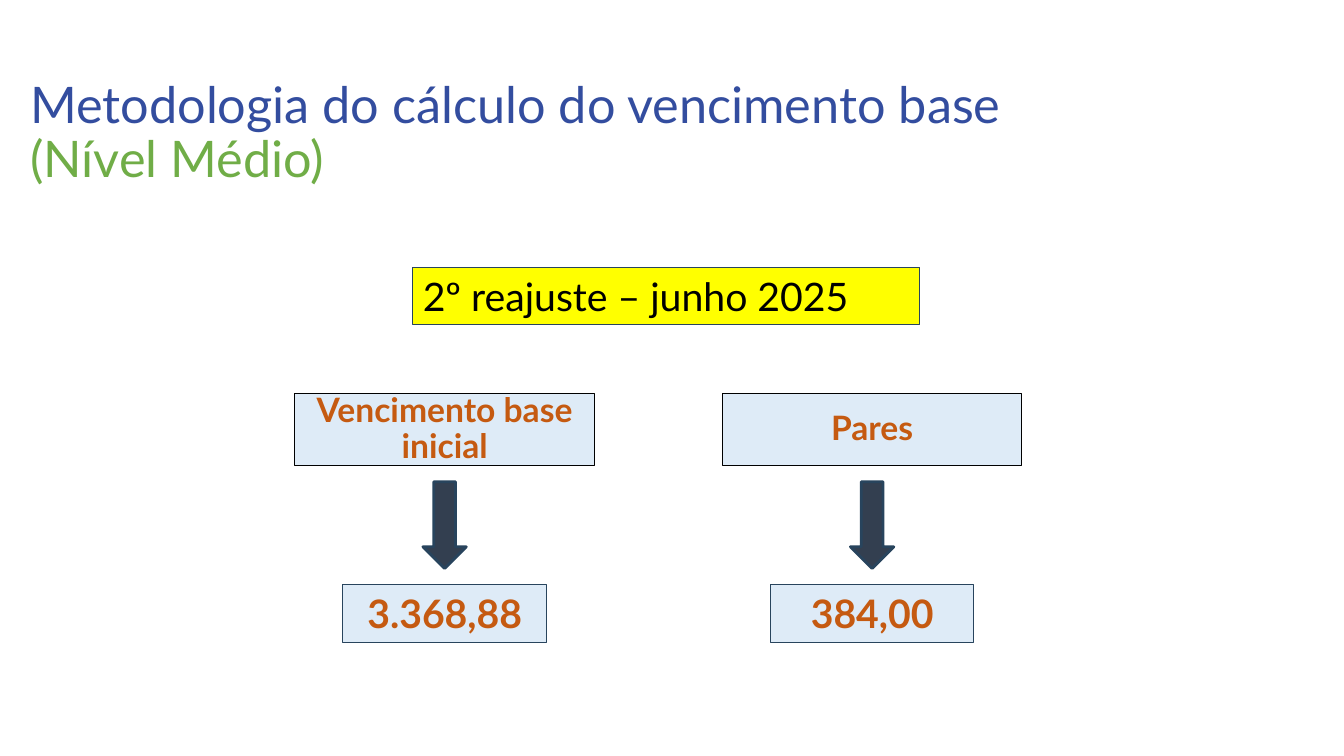
from pptx import Presentation
from pptx.dml.color import RGBColor
from pptx.enum.shapes import MSO_SHAPE as Shape
from pptx.enum.text import MSO_ANCHOR as Anchor, PP_ALIGN as Align
from pptx.util import Inches, Pt

TITLE = ["Metodologia do cálculo do vencimento base", "(Nível Médio)"]
ADJUSTMENT = "2º reajuste – junho 2025"
FACTORS = [
    (["Vencimento base", "inicial"], "3.368,88"),
    (["Pares"], "384,00"),
]

FONT = "Lato"
COLORS = {
    "title": "334D9F", "level": "70AD47", "black": "000000",
    "banner": "FFFF00", "panel": "DEEBF7", "accent": "C55A11",
    "arrow": "333F50", "edge": "28445D",
}

WIDTH, HEIGHT = 13.33, 7.5
FIRST_CENTER, COLUMN_STEP = 4.41, 4.24
# top, width, height of each row
BANNER_ROW = (2.65, 5.03, 0.57)
LABEL_ROW = (3.9, 2.97, 0.72)
ARROW_ROW = (4.78, 0.43, 0.86)
VALUE_ROW = (5.8, 2.02, 0.57)


def color(name):
    return RGBColor.from_string(COLORS[name])


def style_font(font, size, ink, bold=False):
    font.name, font.size, font.bold = FONT, Pt(size), bold
    font.color.rgb = color(ink)


def remove_margins(frame):
    frame.margin_left = frame.margin_right = 0
    frame.margin_top = frame.margin_bottom = 0


def add_centered(slide, kind, center, row, fill, edge="edge", weight=0.75):
    """Add a filled shape centred on a column, at the place its row gives."""
    top, width, height = row
    shape = slide.shapes.add_shape(kind, Inches(center - width / 2), Inches(top),
                                   Inches(width), Inches(height))
    shape.shadow.inherit = False
    shape.fill.solid()
    shape.fill.fore_color.rgb = color(fill)
    shape.line.color.rgb = color(edge)
    shape.line.width = Pt(weight)
    return shape


def write(shape, lines, size, ink, bold=True, align=Align.CENTER,
          anchor=Anchor.TOP, spacing=1.0):
    frame = shape.text_frame
    frame.word_wrap = True
    frame.vertical_anchor = anchor
    frame.text = "\n".join(lines)
    for paragraph in frame.paragraphs:
        paragraph.alignment = align
        paragraph.line_spacing = spacing
        for run in paragraph.runs:
            style_font(run.font, size, ink, bold)


def add_title(slide):
    title = slide.shapes.title
    title.left, title.top = Inches(0.3), Inches(0.65)
    title.width, title.height = Inches(11.5), Inches(1.36)
    frame = title.text_frame
    frame.word_wrap = True
    frame.vertical_anchor = Anchor.MIDDLE
    remove_margins(frame)
    heading = frame.paragraphs[0]
    heading.text = "\v".join(TITLE)
    heading.alignment = Align.LEFT
    heading.line_spacing = 0.9
    for run, ink in zip(heading.runs, ("title", "level")):
        style_font(run.font, 36, ink)


def add_factor(slide, center, label, value):
    label_box = add_centered(slide, Shape.RECTANGLE, center, LABEL_ROW, "panel", "black")
    remove_margins(label_box.text_frame)
    write(label_box, label, 24, "accent", anchor=Anchor.MIDDLE, spacing=0.9)
    add_centered(slide, Shape.DOWN_ARROW, center, ARROW_ROW, "arrow", weight=2)
    value_box = add_centered(slide, Shape.RECTANGLE, center, VALUE_ROW, "panel")
    write(value_box, [value], 28, "accent")


def main():
    deck = Presentation()
    deck.slide_width, deck.slide_height = Inches(WIDTH), Inches(HEIGHT)
    slide = deck.slides.add_slide(deck.slide_layouts.get_by_name("Title Only"))
    add_title(slide)
    banner = add_centered(slide, Shape.RECTANGLE, 6.61, BANNER_ROW, "banner")
    write(banner, [ADJUSTMENT], 28, "black", bold=False, align=Align.LEFT)
    for column, (label, value) in enumerate(FACTORS):
        add_factor(slide, FIRST_CENTER + column * COLUMN_STEP, label, value)
    deck.save("out.pptx")


if __name__ == "__main__":
    main()
